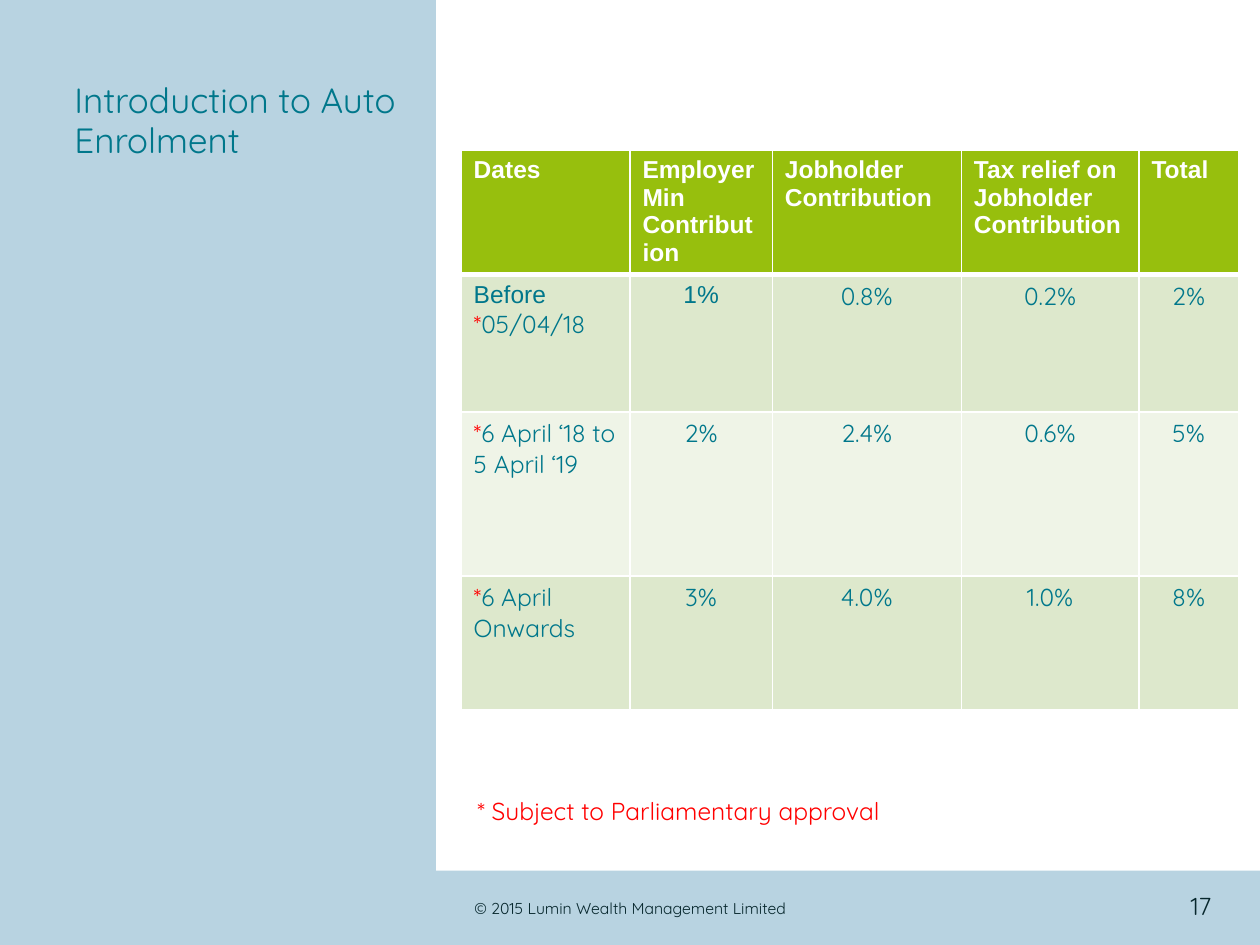
from pptx import Presentation
from pptx.dml.color import RGBColor
from pptx.enum.shapes import MSO_SHAPE
from pptx.enum.text import MSO_ANCHOR, PP_ALIGN
from pptx.oxml import parse_xml
from pptx.oxml.ns import nsdecls
from pptx.util import Inches, Pt

PALE_BLUE = RGBColor(0xB8, 0xD3, 0xE1)
TEAL = RGBColor(0x00, 0x77, 0x8B)
INK = RGBColor(0x07, 0x27, 0x2D)
RED = RGBColor(0xFF, 0x00, 0x00)
WHITE = RGBColor(0xFF, 0xFF, 0xFF)
GREEN = RGBColor(0x97, 0xBF, 0x0D)
BANDS = [RGBColor(0xDD, 0xE8, 0xCC), RGBColor(0xEF, 0xF4, 0xE7)]
SANS, ROUND = "Arial", "Quicksand"

COLUMN_WIDTHS = [1.34, 1.13, 1.5, 1.41, 0.79]
ROW_HEIGHTS = [0.99, 1.09, 1.3, 1.06]
ROWS = [
    ["Dates", "Employer\nMin\nContribution", "Jobholder\nContribution",
     "Tax relief on\nJobholder\nContribution", "Total"],
    ["Before\n*05/04/18", "1%", "0.8%", "0.2%", "2%"],
    ["*6 April ‘18 to\n5 April ‘19", "2%", "2.4%", "0.6%", "5%"],
    ["*6 April Onwards", "3%", "4.0%", "1.0%", "8%"],
]
SANS_TEXTS = {"Before", "1%"}


def style(p, size, color, name=ROUND, bold=False, align=PP_ALIGN.LEFT):
    p.alignment = align
    p.font.size, p.font.name, p.font.bold = Pt(size), name, bold
    p.font.color.rgb = color


def add_panel(s, left, top, width, height):
    panel = s.shapes.add_shape(MSO_SHAPE.RECTANGLE, Inches(left), Inches(top),
                               Inches(width), Inches(height))
    panel.shadow.inherit = False
    panel.fill.solid()
    panel.fill.fore_color.rgb = PALE_BLUE
    panel.line.fill.background()


def add_text(s, left, top, width, height, text, size, color,
             align=PP_ALIGN.LEFT, anchor=MSO_ANCHOR.TOP):
    box = s.shapes.add_textbox(Inches(left), Inches(top), Inches(width), Inches(height))
    tf = box.text_frame
    tf.word_wrap = True
    tf.vertical_anchor = anchor
    tf.text = text
    style(tf.paragraphs[0], size, color, align=align)


def add_page_number(s, left, top, width, height):
    """Place a tab turned on its side, with its text turned back upright."""
    tab = s.shapes.add_shape(MSO_SHAPE.ROUND_2_SAME_RECTANGLE, Inches(left), Inches(top),
                             Inches(width), Inches(height))
    tab.adjustments[0] = tab.adjustments[1] = 0
    tab.rotation = 270
    tab.shadow.inherit = False
    tab.fill.background()
    tab.line.fill.background()
    tf = tab.text_frame
    tf._txBody.bodyPr.set("vert", "vert")
    tf.word_wrap = False
    tf.vertical_anchor = MSO_ANCHOR.MIDDLE
    tf.margin_left, tf.margin_top = Inches(0.04), 0
    tf.margin_right, tf.margin_bottom = Inches(0.08), Inches(0.12)
    tf.text = "17"
    style(tf.paragraphs[0], 14, INK, align=PP_ALIGN.RIGHT)


def add_footer(s, left, top, width, height):
    add_panel(s, left, top, width, height)
    add_text(s, left, top + 0.2, width, 0.2, "© 2015 Lumin Wealth Management Limited",
             9, INK, PP_ALIGN.CENTER, MSO_ANCHOR.MIDDLE)
    add_page_number(s, left + width - 0.58, top + 0.07, 0.26, 0.37)


def set_title(s, left, top, width, height):
    title = s.shapes.title
    s.shapes._spTree.append(title._element)  # bring in front of the side panel
    title.left, title.top = Inches(left), Inches(top)
    title.width, title.height = Inches(width), Inches(height)
    tf = title.text_frame
    tf.word_wrap = True
    tf.vertical_anchor = MSO_ANCHOR.TOP
    tf.text = "Introduction to Auto Enrolment"
    style(tf.paragraphs[0], 20, TEAL)
    tf.paragraphs[0].line_spacing = 0.95


def set_borders(cell, top=1, bottom=1):
    """Draw white cell borders; widths are in points."""
    for side, width in (("L", 1), ("R", 1), ("T", top), ("B", bottom)):
        cell._tc.get_or_add_tcPr().append(parse_xml(
            f'<a:ln{side} {nsdecls("a")} w="{Pt(width)}"><a:solidFill>'
            f'<a:srgbClr val="{WHITE}"/></a:solidFill></a:ln{side}>'))


def fill_cell(cell, text, row, col):
    header = row == 0
    set_borders(cell, top=3 if row == 1 else 1, bottom=3 if header else 1)
    cell.fill.solid()
    cell.fill.fore_color.rgb = GREEN if header else BANDS[(row - 1) % 2]
    if header:
        cell.margin_bottom = 0
    tf = cell.text_frame
    for i, line in enumerate(text.split("\n")):
        p = tf.paragraphs[0] if i == 0 else tf.add_paragraph()
        style(p, 14, WHITE if header else TEAL,
              SANS if header or line in SANS_TEXTS else ROUND, header,
              PP_ALIGN.LEFT if header or col == 0 else PP_ALIGN.CENTER)
        if line.startswith("*"):
            star = p.add_run()
            star.text = "*"
            star.font.color.rgb = RED
        p.add_run().text = line.lstrip("*")


def add_contributions(s, left, top, width, height):
    table = s.shapes.add_table(len(ROWS), len(COLUMN_WIDTHS), Inches(left), Inches(top),
                               Inches(width), Inches(height)).table
    for column, w in zip(table.columns, COLUMN_WIDTHS):
        column.width = Inches(w)
    for row, h in zip(table.rows, ROW_HEIGHTS):
        row.height = Inches(h)
    for i, texts in enumerate(ROWS):
        for j, text in enumerate(texts):
            fill_cell(table.cell(i, j), text, i, j)


def main():
    prs = Presentation()
    prs.slide_width, prs.slide_height = Inches(10), Inches(7.5)
    s = prs.slides.add_slide(prs.slide_layouts[5])
    add_footer(s, 0, 6.91, 10, 0.59)
    add_panel(s, 0, 0, 3.46, 7.5)
    set_title(s, 0.49, 0.6, 2.82, 1.14)
    add_contributions(s, 3.66, 1.19, sum(COLUMN_WIDTHS), sum(ROW_HEIGHTS))
    add_text(s, 3.69, 6.27, 5.51, 0.34, "* Subject to Parliamentary approval", 14, RED)
    prs.save("out.pptx")


if __name__ == "__main__":
    main()
